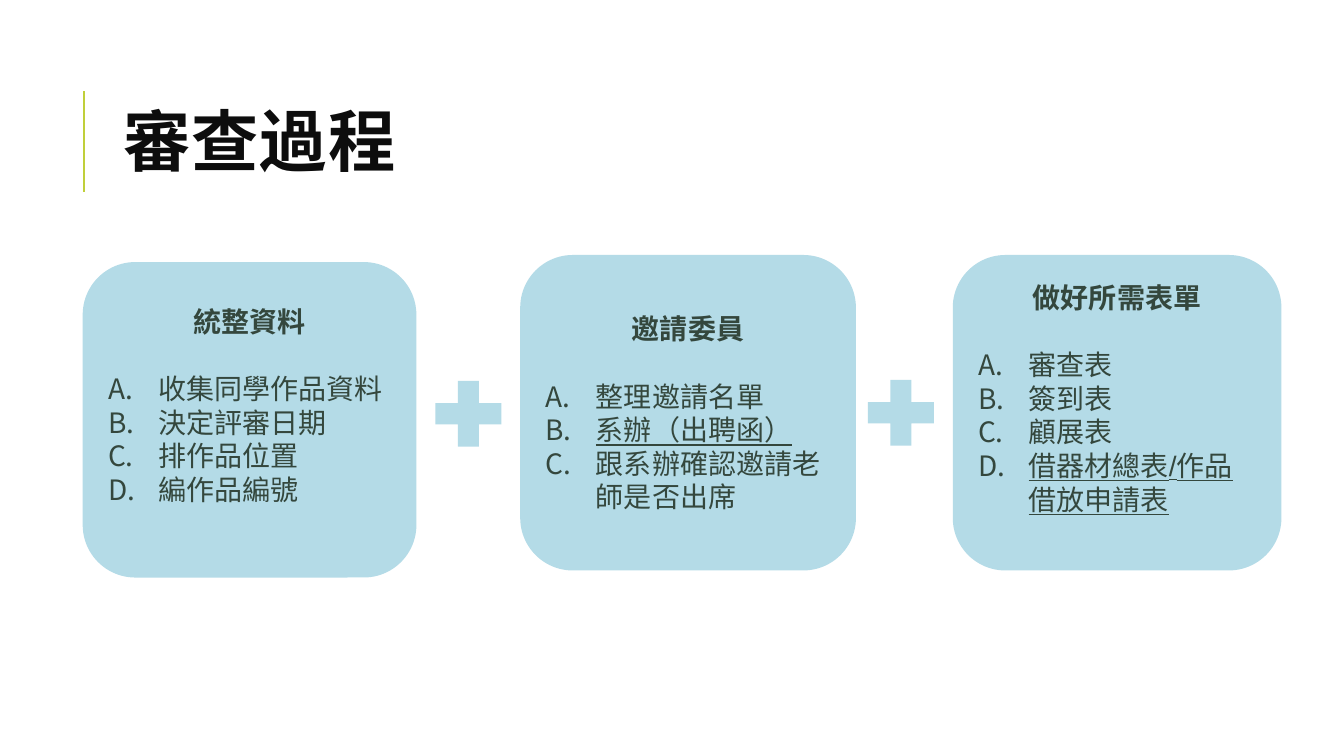
from lxml import etree
from pptx import Presentation
from pptx.dml.color import RGBColor
from pptx.enum.shapes import MSO_CONNECTOR, MSO_SHAPE
from pptx.enum.text import MSO_ANCHOR, MSO_AUTO_SIZE, PP_ALIGN
from pptx.oxml.ns import qn
from pptx.util import Inches, Pt

BLUE = RGBColor(0x09, 0x89, 0xB1)
GREEN = RGBColor(0x34, 0x47, 0x3D)
LIME = RGBColor(0xC0, 0xCF, 0x3A)
BLACK = RGBColor(0x0D, 0x0D, 0x0D)
LINE = MSO_CONNECTOR.STRAIGHT
CARD = MSO_SHAPE.ROUNDED_RECTANGLE
PLUS = MSO_SHAPE.MATH_PLUS
MIDDLE = MSO_ANCHOR.MIDDLE
FIXED = MSO_AUTO_SIZE.NONE
LEFT = PP_ALIGN.LEFT
CENTER = PP_ALIGN.CENTER

CARDS = [
    (0.82, 2.6, 3.31, 0.34, "統整資料",
     ["收集同學作品資料", "決定評審日期", "排作品位置", "編作品編號"]),
    (5.16, 2.53, 3.33, 0.05, "邀請委員",
     ["整理邀請名單", "系辦（出聘函）", "跟系辦確認邀請老師是否出席"]),
    (9.45, 2.53, 3.26, 0.34, "做好所需表單",
     ["審查表", "簽到表", "顧展表", "借器材總表/作品借放申請表"]),
]
MARKED = {"系辦（出聘函）", "借器材總表/作品借放申請表"}


def add_tile(kind, left, top, width, height):
    tile = slide.shapes.add_shape(
        kind, Inches(left), Inches(top), Inches(width), Inches(height))
    tile.shadow.inherit = False
    tile.fill.solid()
    tile.fill.fore_color.rgb = BLUE
    color = tile.fill._xPr.find(".//" + qn("a:srgbClr"))
    etree.SubElement(color, qn("a:alpha")).set("val", "30000")
    tile.line.fill.background()
    return tile


def style(para, bold):
    font = para.runs[0].font
    font.name = "Arial"
    font.size = Pt(20)
    font.bold = bold
    font.color.rgb = GREEN
    return font


deck = Presentation()
deck.slide_width = Inches(13.33)
deck.slide_height = Inches(7.5)
slide = deck.slides.add_slide(deck.slide_layouts[5])

rule = slide.shapes.add_connector(
    LINE, Inches(0.83), Inches(1.9), Inches(0.83), Inches(0.9))
rule.line.color.rgb = LIME
rule.line.width = Pt(1.5)
etree.SubElement(rule._element.spPr, qn("a:effectLst"))

title = slide.shapes.title
title.left, title.top = Inches(1.12), Inches(0.64)
title.width, title.height = Inches(10.63), Inches(1.64)
frame = title.text_frame
frame.text = "審查過程"
frame.auto_size = FIXED
frame.vertical_anchor = MIDDLE
head = frame.paragraphs[0]
head.alignment = LEFT
head.line_spacing = 0.8
font = head.runs[0].font
font.name = "Calibri"
font.size = Pt(48)
font.bold = True
font.color.rgb = BLACK
head.runs[0]._r.get_or_add_rPr().set("spc", "100")

for left, top, width, bottom, name, items in CARDS:
    card = add_tile(CARD, left, top, width, 3.13)
    frame = card.text_frame
    frame.word_wrap = True
    frame.vertical_anchor = MIDDLE
    frame.margin_bottom = Inches(bottom)
    frame.text = name
    head = frame.paragraphs[0]
    head.alignment = CENTER
    head.space_after = Pt(24)
    style(head, True)
    for item in items:
        para = frame.add_paragraph()
        para.text = item
        para.alignment = LEFT
        props = para._p.get_or_add_pPr()
        props.set("marL", str(Inches(0.5)))
        props.set("indent", str(Inches(-0.5)))
        etree.SubElement(props, qn("a:buFont")).set("typeface", "Arial")
        etree.SubElement(props, qn("a:buAutoNum")).set("type", "alphaUcPeriod")
        style(para, False).underline = item in MARKED

for left, top in [(4.2, 3.66), (8.49, 3.65)]:
    add_tile(PLUS, left, top, 0.89, 0.89)

deck.save("out.pptx")
